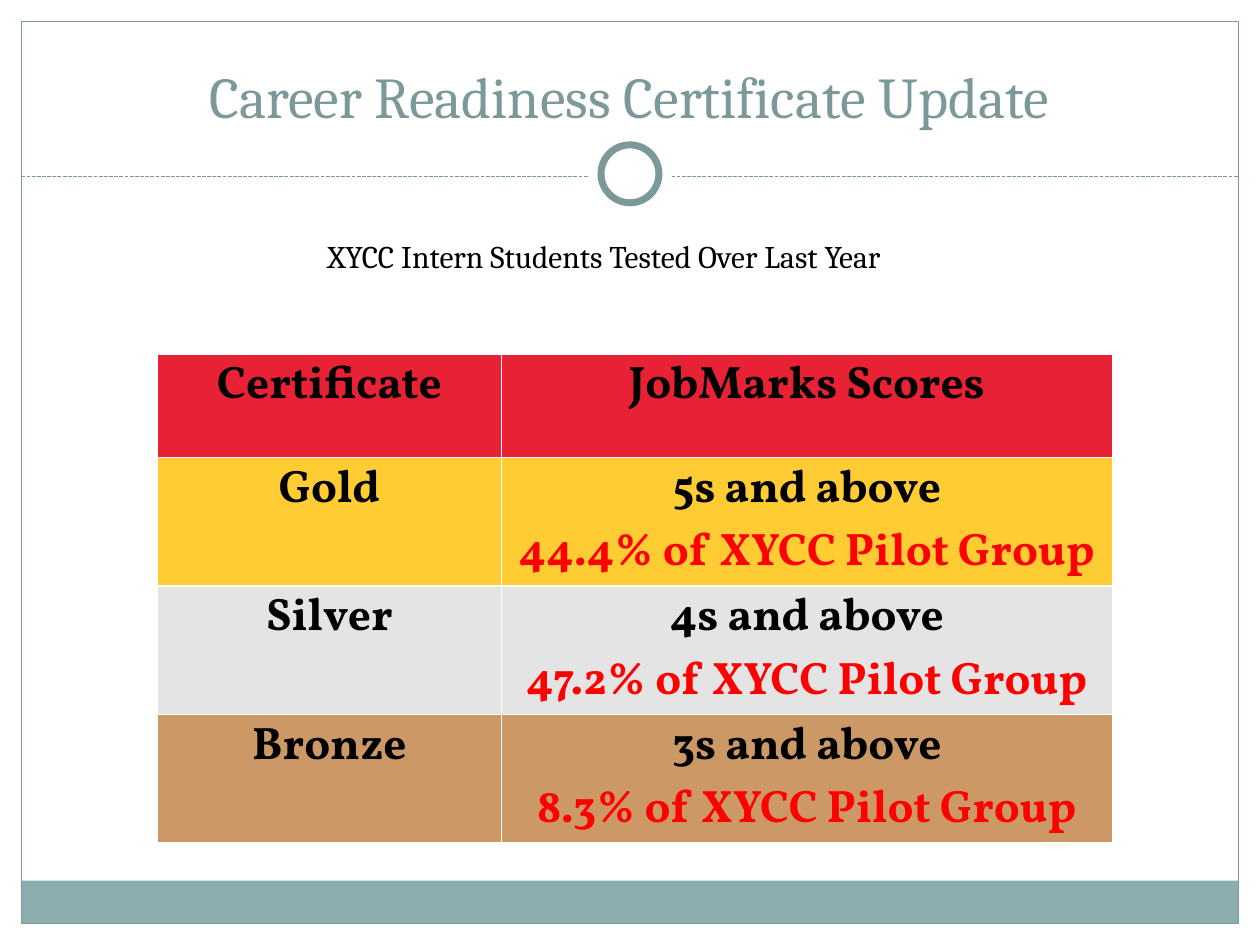
from lxml import etree
from pptx import Presentation
from pptx.dml.color import RGBColor
from pptx.enum.dml import MSO_LINE
from pptx.enum.shapes import MSO_CONNECTOR, MSO_SHAPE
from pptx.enum.text import MSO_ANCHOR, MSO_AUTO_SIZE, PP_ALIGN
from pptx.oxml.ns import qn
from pptx.util import Inches, Pt

RECT, OVAL = MSO_SHAPE.RECTANGLE, MSO_SHAPE.OVAL
STRAIGHT, DASH = MSO_CONNECTOR.STRAIGHT, MSO_LINE.SQUARE_DOT
LEFT, CENTER = PP_ALIGN.LEFT, PP_ALIGN.CENTER
BOTTOM, NO_FIT = MSO_ANCHOR.BOTTOM, MSO_AUTO_SIZE.NONE

COLORS = {
    "white": "FFFFFF", "black": "000000", "teal": "7C999A", "band": "8CADAE",
    "header": "E82134", "gold": "FFCC33", "silver": "E4E4E4",
    "bronze": "CC9966", "share": "FF0000",
}
TITLE = {"size": Pt(33), "name": "Cambria"}
CAPTION = {"size": Pt(18), "name": "Cambria"}
CELL = {"size": Pt(26), "name": "Vollkorn", "bold": True}
CELL_MARGINS = {
    "margin_left": Inches(0.01), "margin_right": Inches(0.01),
    "margin_top": Inches(0.01), "margin_bottom": 0,
}
ROWS = [
    ("header", "Certificate", ["JobMarks Scores"]),
    ("gold", "Gold", ["5s and above", "44.4% of XYCC Pilot Group"]),
    ("silver", "Silver", ["4s and above", "47.2% of XYCC Pilot Group"]),
    ("bronze", "Bronze", ["3s and above", "8.3% of XYCC Pilot Group"]),
]


def rgb(name):
    """Return the named colour."""
    return RGBColor.from_string(COLORS[name])


def set_values(target, values):
    """Set attributes of an object from a dict."""
    for key, value in values.items():
        setattr(target, key, value)


def write(p, text, style, color, align=LEFT):
    """Write one formatted run into a paragraph."""
    p.alignment = align
    r = p.add_run()
    r.text = text
    set_values(r.font, style)
    r.font.color.rgb = rgb(color)


def add_plain(s, kind, box, fill=None, line=None, width=0.75):
    """Add a preset shape without shadow."""
    sp = s.shapes.add_shape(kind, *map(Inches, box))
    sp.shadow.inherit = False
    if fill:
        sp.fill.solid()
        sp.fill.fore_color.rgb = rgb(fill)
    else:
        sp.fill.background()
    if line:
        sp.line.color.rgb = rgb(line)
        sp.line.width = Pt(width)
    else:
        sp.line.fill.background()


def add_frame(s, box):
    """Add the page frame, bottom band, dashed rule and ring."""
    x, y, w, h = box
    band, rule_y, ring_y = 0.34, 1.4, 1.38
    add_plain(s, RECT, (x, y + h - band, w, band), fill="band")
    add_plain(s, RECT, box, line="teal")
    rule = s.shapes.add_connector(
        STRAIGHT, Inches(x), Inches(rule_y), Inches(x + w), Inches(rule_y))
    rule.line.color.rgb = rgb("teal")
    rule.line.width = Pt(0.75)
    rule.line.dash_style = DASH
    etree.SubElement(rule.element.spPr, qn("a:effectLst"))
    for size, line in ((0.67, None), (0.46, "teal")):
        ring = (x + (w - size) / 2, ring_y - size / 2, size, size)
        add_plain(s, OVAL, ring, "white", line, 4)


def add_title(s, box, text):
    """Place and format the title placeholder."""
    sp = s.shapes.title
    sp.left, sp.top, sp.width, sp.height = map(Inches, box)
    tf = sp.text_frame
    set_values(tf, {"vertical_anchor": BOTTOM, "auto_size": NO_FIT})
    write(tf.paragraphs[0], text, TITLE, "teal", CENTER)


def add_caption(s, box, text):
    """Add the line of text above the table."""
    tf = s.shapes.add_textbox(*map(Inches, box)).text_frame
    tf.word_wrap = True
    write(tf.paragraphs[0], text, CAPTION, "black")


def fill_cell(cell, lines, fill):
    """Fill a cell; its second line is the share of the group."""
    set_values(cell, CELL_MARGINS)
    cell.fill.solid()
    cell.fill.fore_color.rgb = rgb(fill)
    tf = cell.text_frame
    for i, (text, color) in enumerate(zip(lines, ("black", "share"))):
        p = tf.add_paragraph() if i else tf.paragraphs[0]
        write(p, text, CELL, color, CENTER)


def add_scores(s, box):
    """Add the table of certificates and scores."""
    table = s.shapes.add_table(len(ROWS), 2, *map(Inches, box)).table
    set_values(table, {"first_row": False, "horz_banding": False})
    first = 2.73
    for column, width in zip(table.columns, (first, box[2] - first)):
        column.width = Inches(width)
    for i, (fill, name, lines) in enumerate(ROWS):
        fill_cell(table.cell(i, 0), [name], fill)
        fill_cell(table.cell(i, 1), lines, fill)


def main():
    """Build the slide and save it."""
    prs = Presentation()
    prs.slide_width, prs.slide_height = Inches(10), Inches(7.5)
    s = prs.slides.add_slide(prs.slide_layouts[5])
    add_frame(s, (0.17, 0.17, 9.66, 7.16))
    add_title(s, (0.33, 0.25, 9.33, 0.83), "Career Readiness Certificate Update")
    add_scores(s, (1.25, 2.81, 7.58, 3.28))
    add_caption(s, (2.5, 1.83, 5.42, 0.4),
                "XYCC Intern Students Tested Over Last Year")
    prs.save("out.pptx")


if __name__ == "__main__":
    main()
